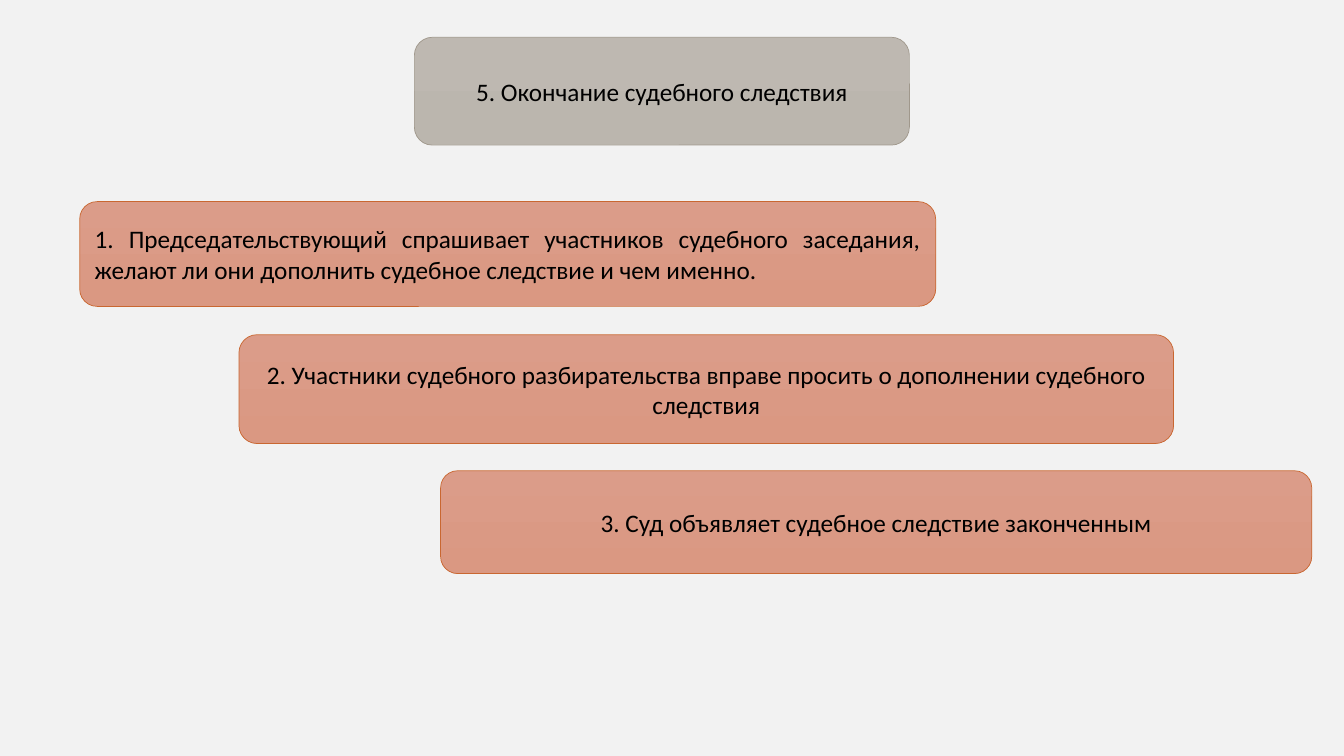
import pptx
import pptx.util
import pptx.dml.color
import pptx.enum.shapes
import pptx.enum.text
from dataclasses import dataclass

Inches = pptx.util.Inches
Align = pptx.enum.text.PP_ALIGN


@dataclass(frozen=True)
class Theme:
    font: str = "Calibri"
    size: int = 18
    edge: float = 0.5
    back: str = "F2F2F2"
    ink: str = "000000"
    # Box looks: top colour, bottom colour, outline
    head: tuple = ("BEB8B1", "BBB6AE", "A0988C")
    step: tuple = ("DB9C89", "DA9882", "C96731")


def color(code):
    return pptx.dml.color.RGBColor.from_string(code)


class Deck:
    def __init__(self, theme):
        self.theme = theme
        self.file = pptx.Presentation()
        self.file.slide_width = Inches(13.33)
        self.file.slide_height = Inches(7.5)
        self.slide = self.file.slides.add_slide(self.file.slide_layouts[6])
        fill = self.slide.background.fill
        fill.solid()
        fill.fore_color.rgb = color(theme.back)

    def box(self, place, text, look, align=Align.CENTER):
        """Add a rounded box with a top-to-bottom gradient."""
        shape = self.slide.shapes.add_shape(
            pptx.enum.shapes.MSO_SHAPE.ROUNDED_RECTANGLE, *map(Inches, place))
        shape.shadow.inherit = False
        *shades, edge = look
        shape.fill.gradient()
        shape.fill.gradient_angle = 270
        for stop, shade in zip(shape.fill.gradient_stops, shades):
            stop.color.rgb = color(shade)
        shape.line.color.rgb = color(edge)
        shape.line.width = pptx.util.Pt(self.theme.edge)
        self.label(shape.text_frame, text, align)

    def label(self, frame, text, align):
        """Set the text of a box, centred from top to bottom."""
        frame.word_wrap = True
        frame.vertical_anchor = pptx.enum.text.MSO_ANCHOR.MIDDLE
        line = frame.paragraphs[0]
        line.text = text
        line.alignment = align
        line.font.name = self.theme.font
        line.font.size = pptx.util.Pt(self.theme.size)
        line.font.color.rgb = color(self.theme.ink)


def main():
    theme = Theme()
    deck = Deck(theme)

    # Heading
    deck.box((4.11, 0.37, 4.91, 1.07), "5. Окончание судебного следствия", theme.head)

    # Staircase of steps
    steps = [
        ((0.79, 2, 8.49, 1.04), Align.JUSTIFY,
         "1. Председательствующий спрашивает участников судебного заседания, "
         "желают ли они дополнить судебное следствие и чем именно."),
        ((2.37, 3.32, 9.27, 1.08), Align.CENTER,
         "2. Участники судебного разбирательства вправе просить "
         "о дополнении судебного следствия"),
        ((4.37, 4.67, 8.64, 1.02), Align.CENTER,
         "3. Суд объявляет судебное следствие законченным"),
    ]
    for place, align, text in steps:
        deck.box(place, text, theme.step, align)

    deck.file.save("out.pptx")


if __name__ == "__main__":
    main()
